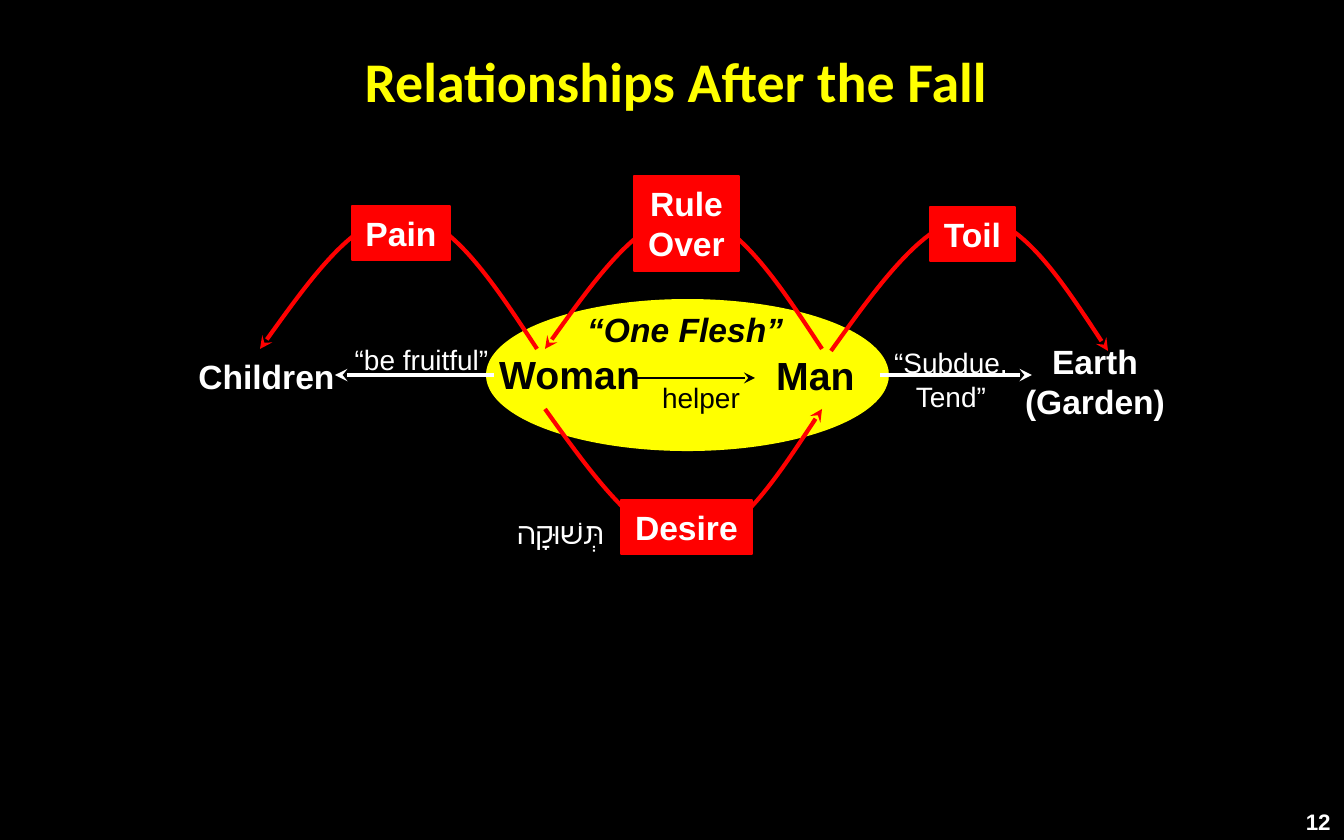
from dataclasses import dataclass

from lxml import etree
from pptx import Presentation
from pptx.dml.color import RGBColor
from pptx.enum.shapes import MSO_CONNECTOR, MSO_SHAPE
from pptx.enum.text import MSO_ANCHOR, MSO_AUTO_SIZE, PP_ALIGN
from pptx.oxml.ns import qn
from pptx.util import Pt

ELLIPSE, RECTANGLE = MSO_SHAPE.OVAL, MSO_SHAPE.RECTANGLE
STRAIGHT = MSO_CONNECTOR.STRAIGHT
LEFT, CENTER, RIGHT = PP_ALIGN.LEFT, PP_ALIGN.CENTER, PP_ALIGN.RIGHT
TOP, MIDDLE = MSO_ANCHOR.TOP, MSO_ANCHOR.MIDDLE
FIT_SHAPE, NO_FIT = MSO_AUTO_SIZE.SHAPE_TO_FIT_TEXT, MSO_AUTO_SIZE.NONE
EMU_PER_PX = 914400 / 134.4


@dataclass(frozen=True)
class Theme:
    black: RGBColor = RGBColor(0, 0, 0)
    white: RGBColor = RGBColor(255, 255, 255)
    yellow: RGBColor = RGBColor(255, 255, 0)
    red: RGBColor = RGBColor(255, 0, 0)
    body_font: str = "Arial"
    title_font: str = "Calibri"
    hebrew_font: str = "Lato"
    title_size: int = 30
    couple_size: int = 21
    label_size: int = 18
    hebrew_size: int = 16
    verb_size: int = 15
    number_size: int = 12
    thin: float = 1.5
    thick: float = 2.25
    border: float = 0.75


THEME = Theme()


def px(length):
    return round(length * EMU_PER_PX)


def box(*lengths):
    return [px(length) for length in lengths]


def write(frame, lines, size, color, font=THEME.body_font, bold=False, italic=False,
          align=LEFT, anchor=TOP, wrap=False):
    frame.word_wrap = wrap
    frame.auto_size = NO_FIT if wrap else FIT_SHAPE
    frame.vertical_anchor = anchor
    for index, line in enumerate(lines):
        paragraph = frame.add_paragraph() if index else frame.paragraphs[0]
        paragraph.text = line
        paragraph.alignment = align
        paragraph.font.name = font
        paragraph.font.size = Pt(size)
        paragraph.font.bold = bold
        paragraph.font.italic = italic
        paragraph.font.color.rgb = color


def add_words(shapes, place, lines, size, color, **style):
    write(shapes.add_textbox(*box(*place)).text_frame, lines, size, color, **style)


def style_line(shape, color, width, arrow_end=None):
    shape.line.color.rgb = color
    shape.line.width = Pt(width)
    if arrow_end:
        etree.SubElement(shape.line._get_or_add_ln(), qn(arrow_end), type="stealth")


def add_arrow(shapes, start, end, color, width):
    arrow = shapes.add_connector(STRAIGHT, *box(*start, *end))
    style_line(arrow, color, width, "a:tailEnd")
    etree.SubElement(arrow._element.spPr, qn("a:effectLst"))


def add_arc(shapes, left, base, peak, arrow_end):
    width, height = 277, abs(peak - base)
    builder = shapes.build_freeform(px(left + width), px(base))
    builder.add_line_segments([box(left + 143, peak), box(left, base)], close=False)
    arc = builder.convert_to_shape()

    base_y, peak_y = (height, 0) if peak < base else (0, height)
    middle_y = height / 2
    curves = [
        [(233, middle_y), (189, peak_y), (143, peak_y)],
        [(96, peak_y), (48, middle_y), (0, base_y)],
    ]
    segments = list(arc._element.iter(qn("a:lnTo")))
    for segment, points in zip(segments, curves):
        curve = etree.Element(qn("a:cubicBezTo"))
        for x, y in points:
            etree.SubElement(curve, qn("a:pt"), x=str(px(x)), y=str(px(y)))
        segment.getparent().replace(segment, curve)

    arc.fill.background()
    style_line(arc, THEME.red, THEME.thick, arrow_end)
    arc.shadow.inherit = False


def add_consequence(slide, lines, label_place, arc_place, arrow_end):
    shapes = slide.shapes.add_group_shape().shapes
    add_arc(shapes, *arc_place, arrow_end)
    label = shapes.add_shape(RECTANGLE, *box(*label_place))
    label.fill.solid()
    label.fill.fore_color.rgb = THEME.red
    style_line(label, THEME.red, THEME.border)
    label.shadow.inherit = False
    write(label.text_frame, lines, THEME.label_size, THEME.white, bold=True, align=CENTER)


def add_union(shapes):
    union = shapes.add_shape(ELLIPSE, *box(486, 299, 403, 152))
    union.fill.solid()
    union.fill.fore_color.rgb = THEME.yellow
    union.line.fill.background()
    union.shadow.inherit = False


def main():
    presentation = Presentation()
    presentation.slide_width, presentation.slide_height = box(1344, 840)
    slide = presentation.slides.add_slide(presentation.slide_layouts[6])
    slide.background.fill.solid()
    slide.background.fill.fore_color.rgb = THEME.black
    shapes = slide.shapes

    add_union(shapes)
    add_words(shapes, (172, 43, 1008, 74), ["Relationships After the Fall"],
              THEME.title_size, THEME.yellow, font=THEME.title_font, bold=True,
              align=CENTER, anchor=MIDDLE, wrap=True)

    add_arrow(shapes, (637, 378), (755, 378), THEME.black, THEME.thin)
    add_arrow(shapes, (880, 375), (1032, 375), THEME.white, THEME.thick)
    add_arrow(shapes, (494, 375), (335, 375), THEME.white, THEME.thick)

    for name, place in (("Woman", (486, 344, 169, 60)), ("Man", (763, 345, 106, 60))):
        add_words(shapes, place, [name], THEME.couple_size, THEME.black, bold=True)
    add_words(shapes, (574, 302, 224, 54), ["“One Flesh”"],
              THEME.label_size, THEME.black, bold=True, italic=True)

    for lines, place, color in (
        (["helper"], (648, 374, 106, 47), THEME.black),
        (["“be fruitful”"], (340, 336, 163, 47), THEME.white),
        (["“Subdue,", "Tend”"], (880, 339, 142, 82), THEME.white),
    ):
        add_words(shapes, place, lines, THEME.verb_size, color, align=CENTER)

    for lines, place in (
        (["Children"], (184, 349, 165, 54)),
        (["Earth", "(Garden)"], (1011, 334, 168, 95)),
    ):
        add_words(shapes, place, lines, THEME.label_size, THEME.white, bold=True, align=CENTER)

    for lines, label_place, arc_place, arrow_end in (
        (["Rule", "Over"], (634, 176, 105, 95), (545, 349, 215), "a:tailEnd"),
        (["Desire"], (621, 500, 131, 54), (545, 409, 543), "a:headEnd"),
        (["Pain"], (352, 206, 98, 54), (260, 349, 215), "a:tailEnd"),
        (["Toil"], (930, 207, 85, 54), (831, 351, 217), "a:headEnd"),
    ):
        add_consequence(slide, lines, label_place, arc_place, arrow_end)

    add_words(shapes, (1277, 802, 67, 38), ["12"], THEME.number_size, THEME.white,
              bold=True, align=RIGHT, wrap=True)
    add_words(shapes, (504, 508, 117, 50), ["תְּשׁוּקָה"], THEME.hebrew_size, THEME.white,
              font=THEME.hebrew_font)

    presentation.save("out.pptx")


if __name__ == "__main__":
    main()
